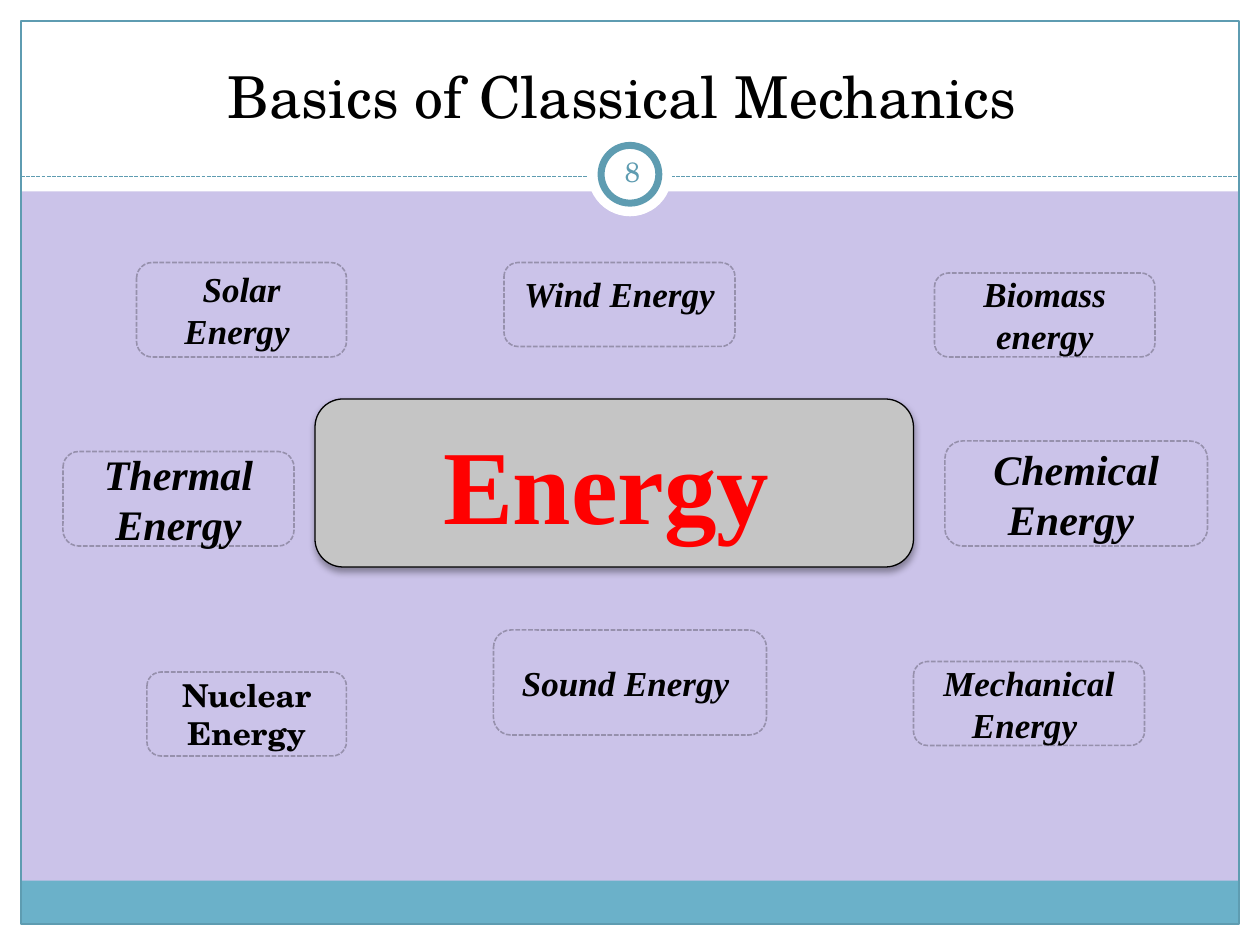
from lxml import etree
from pptx import Presentation
from pptx.dml.color import RGBColor
from pptx.enum.dml import MSO_LINE
from pptx.enum.shapes import MSO_CONNECTOR, MSO_SHAPE
from pptx.enum.text import MSO_ANCHOR, PP_ALIGN
from pptx.oxml import parse_xml
from pptx.oxml.ns import nsdecls, qn
from pptx.util import Inches, Pt

RECT, OVAL, ROUND = MSO_SHAPE.RECTANGLE, MSO_SHAPE.OVAL, MSO_SHAPE.ROUNDED_RECTANGLE
TOP, MIDDLE, BOTTOM = MSO_ANCHOR.TOP, MSO_ANCHOR.MIDDLE, MSO_ANCHOR.BOTTOM
CENTER, DASH = PP_ALIGN.CENTER, MSO_LINE.SQUARE_DOT
STRAIGHT = MSO_CONNECTOR.STRAIGHT

WHITE = RGBColor(0xFF, 0xFF, 0xFF)
BLACK = RGBColor(0, 0, 0)
RED = RGBColor(0xFF, 0, 0)
LILAC = RGBColor(0xCB, 0xC3, 0xE9)
MAUVE = RGBColor(0x96, 0x90, 0xAC)
GREY = RGBColor(0xC5, 0xC5, 0xC5)
TEAL = RGBColor(0x5E, 0x9C, 0xB1)
AQUA = RGBColor(0x6B, 0xB1, 0xC9)
SERIF, SCHOOL = "Times New Roman", "TeX Gyre Schola"

deck = Presentation()
deck.slide_width, deck.slide_height = Inches(10), Inches(7.5)
COLS, ROWS = 120, 90
unit = deck.slide_width // COLS
slide = deck.slides.add_slide(deck.slide_layouts[6])
slide.background.fill.solid()
slide.background.fill.fore_color.rgb = LILAC


def draw(kind, cells, fill=None, line=None, width=0.75):
    shape = slide.shapes.add_shape(kind, *[round(n * unit) for n in cells])
    shape.shadow.inherit = False
    if fill is None:
        shape.fill.background()
    else:
        shape.fill.solid()
        shape.fill.fore_color.rgb = fill
    if line is None:
        shape.line.fill.background()
    else:
        shape.line.color.rgb = line
        shape.line.width = Pt(width)
    return shape


def write(shape, text, size, font, color=BLACK, bold=False, italic=False, anchor=MIDDLE):
    frame = shape.text_frame
    frame.word_wrap = True
    frame.vertical_anchor = anchor
    frame.text = text
    line = frame.paragraphs[0]
    line.alignment = CENTER
    face = line.runs[0].font
    face.name, face.size, face.color.rgb = font, Pt(size), color
    face.bold, face.italic = bold, italic
    return frame


edge, head, rule = 2, 18.24, 16.8
for cells in (
    (0, ROWS - edge, COLS, edge),
    (0, 0, COLS, head),
    (0, 0, edge, ROWS),
    (COLS - edge, 0, edge, ROWS),
):
    draw(RECT, cells, WHITE)
draw(RECT, (edge, 83.88, COLS - 2 * edge, 4.12), AQUA)
draw(RECT, (edge, edge, COLS - 2 * edge, ROWS - 2 * edge), line=TEAL)

dash = slide.shapes.add_connector(
    STRAIGHT, *[round(n * unit) for n in (edge, rule, COLS - edge, rule)]
)
dash.line.color.rgb = TEAL
dash.line.width = Pt(0.75)
dash.line.dash_style = DASH
etree.SubElement(dash._element.spPr, qn("a:effectLst"))

mid = COLS / 2
for size, line in ((8, None), (5.5, TEAL)):
    draw(OVAL, (mid - size / 2, 16.6 - size / 2, size, size), WHITE, line, 4)

title = slide.shapes.add_textbox(*[round(n * unit) for n in (4, 3, 112, 10)])
write(title, "Basics of Classical Mechanics ", 33, SCHOOL, anchor=BOTTOM)

page = slide.shapes.add_textbox(*[round(n * unit) for n in (57.24, 13.44, 6, 5.76)])
frame = write(page, "8", 16, SCHOOL, TEAL)
frame.margin_left = frame.margin_right = Inches(0.05)
frame.margin_top = frame.margin_bottom = Inches(0.05)

core = draw(ROUND, (30, 38, 57, 16), GREY, BLACK)
frame = write(core, "Energy", 60, SERIF, RED, bold=True)
gap = frame.paragraphs[0].add_run()
gap.text = " "
gap.font.size, gap.font.name = Pt(36), SERIF
core._element.spPr.find(qn("a:effectLst")).append(parse_xml(
    f'<a:outerShdw {nsdecls("a")} blurRad="50800" dist="25400" dir="5400000" rotWithShape="0">'
    '<a:srgbClr val="000000"><a:alpha val="35000"/></a:srgbClr></a:outerShdw>'
))

for text, cells, size in (
    ("Nuclear Energy", (14, 64, 19, 8), 18),
    ("Wind Energy", (48, 25, 22, 8), 20),
    ("Solar Energy ", (13, 25, 20, 9), 20),
    ("Thermal Energy", (6, 43, 22, 9), 24),
    ("Mechanical Energy ", (87, 63, 22, 8), 20),
    ("Sound Energy ", (47, 60, 26, 10), 20),
    ("Chemical Energy ", (90, 42, 25, 10), 24),
    ("Biomass energy", (89, 26, 21, 8), 20),
):
    box = draw(ROUND, cells, LILAC, MAUVE, 0.9)
    box.line.dash_style = DASH
    plain = text.startswith("Nuclear")
    anchor = TOP if text.startswith("Wind") else MIDDLE
    write(box, text, size, SCHOOL if plain else SERIF, bold=True, italic=not plain, anchor=anchor)

deck.save("out.pptx")
